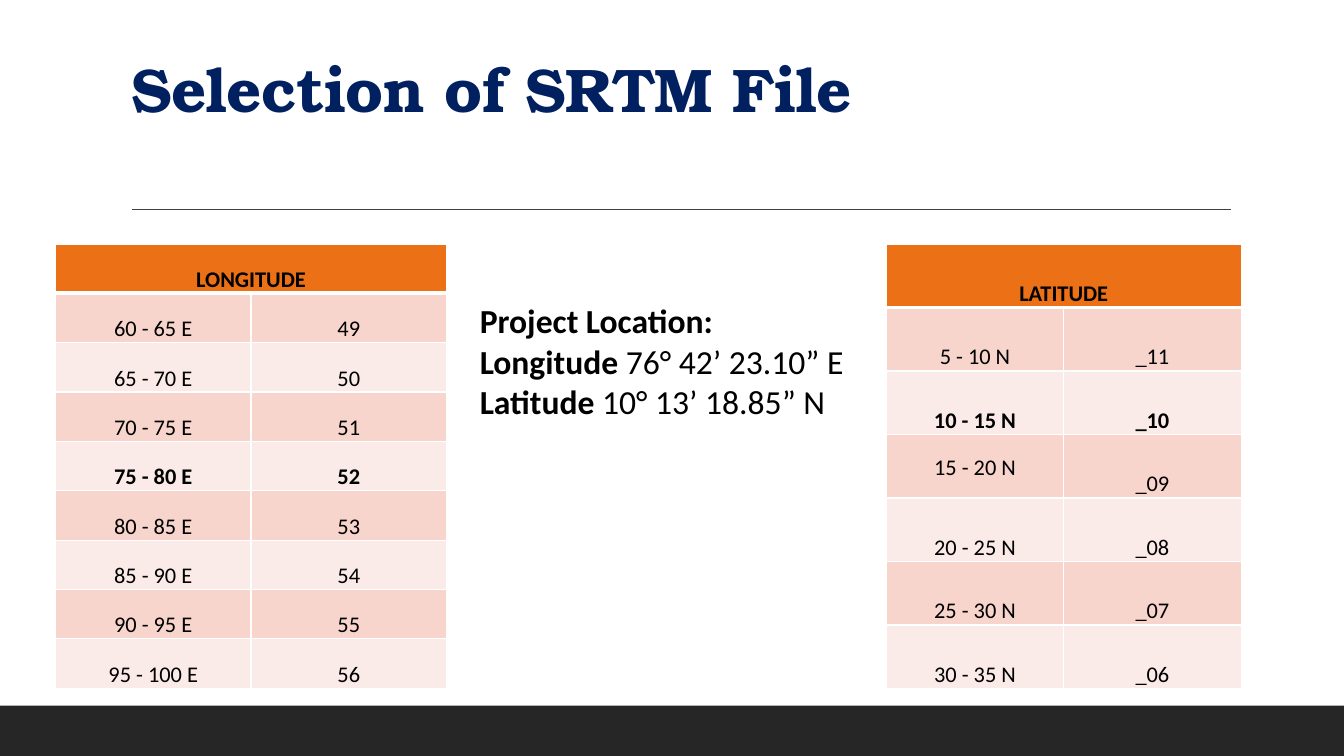
import pptx
import pptx.util
import pptx.dml.color
import pptx.enum.shapes
import pptx.enum.text
import pptx.oxml
import pptx.oxml.ns
import lxml.etree

Inches = pptx.util.Inches
Pt = pptx.util.Pt
RGBColor = pptx.dml.color.RGBColor
Anchor = pptx.enum.text.MSO_ANCHOR
qn = pptx.oxml.ns.qn

NAVY = RGBColor(0x00, 0x20, 0x60)
BLACK = RGBColor(0x00, 0x00, 0x00)
WHITE = RGBColor(0xFF, 0xFF, 0xFF)
CHARCOAL = RGBColor(0x26, 0x26, 0x26)
GRAY = RGBColor(0x40, 0x40, 0x40)
ORANGE = RGBColor(0xEC, 0x70, 0x16)
ROSE = RGBColor(0xF8, 0xD5, 0xCC)
PALE_ROSE = RGBColor(0xFB, 0xEB, 0xE8)


class SlideBuilder:
    title_font = "TeX Gyre Bonum"
    body_font = "Calibri"

    def __init__(self, slide):
        self.slide = slide

    def run(self, paragraph, text, size, bold=False, color=BLACK, font=body_font):
        run = paragraph.add_run()
        run.text = text
        run.font.name = font
        run.font.size = Pt(size)
        run.font.bold = bold
        run.font.color.rgb = color
        return run

    def title(self, text, left, top, width, height):
        title = self.slide.shapes.title
        title.left, title.top = Inches(left), Inches(top)
        title.width, title.height = Inches(width), Inches(height)
        frame = title.text_frame
        frame.word_wrap = True
        frame.auto_size = pptx.enum.text.MSO_AUTO_SIZE.NONE
        frame.vertical_anchor = Anchor.BOTTOM
        paragraph = frame.paragraphs[0]
        paragraph.alignment = pptx.enum.text.PP_ALIGN.LEFT
        paragraph.line_spacing = 0.9
        run = self.run(paragraph, text, 44, True, NAVY, self.title_font)
        run.font._element.set("spc", "-50")

    def bar(self, left, top, width, height, color):
        bar = self.slide.shapes.add_shape(
            pptx.enum.shapes.MSO_SHAPE.RECTANGLE,
            Inches(left), Inches(top), Inches(width), Inches(height))
        bar.shadow.inherit = False
        bar.fill.solid()
        bar.fill.fore_color.rgb = color
        bar.line.fill.background()

    def rule(self, left, right, y, color):
        rule = self.slide.shapes.add_connector(
            pptx.enum.shapes.MSO_CONNECTOR.STRAIGHT,
            Inches(left), Inches(y), Inches(right), Inches(y))
        rule.line.color.rgb = color
        rule.line.width = Pt(1)
        lxml.etree.SubElement(rule._element.spPr, qn("a:effectLst"))

    def text(self, left, top, width, height, lines):
        box = self.slide.shapes.add_textbox(
            Inches(left), Inches(top), Inches(width), Inches(height))
        frame = box.text_frame
        frame.word_wrap = True
        for index, line in enumerate(lines):
            paragraph = frame.add_paragraph() if index else frame.paragraphs[0]
            for words, bold in line:
                self.run(paragraph, words, 24, bold)

    def borders(self, cell, bottom):
        properties = cell._tc.get_or_add_tcPr()
        sides = (("lnL", 1), ("lnR", 1), ("lnT", 1), ("lnB", bottom))
        for index, (side, width) in enumerate(sides):
            properties.insert(index, pptx.oxml.parse_xml(
                f'<a:{side} {pptx.oxml.ns.nsdecls("a")} w="{Pt(width)}">'
                f'<a:solidFill><a:srgbClr val="{WHITE}"/></a:solidFill></a:{side}>'))

    def cell(self, cell, text, fill, bold, side_inset, top_inset, spacing,
             anchor=Anchor.BOTTOM, bottom_border=1):
        cell.fill.solid()
        cell.fill.fore_color.rgb = fill
        self.borders(cell, bottom_border)
        cell.margin_left = cell.margin_right = Inches(side_inset)
        cell.margin_top, cell.margin_bottom = Inches(top_inset), 0
        cell.vertical_anchor = anchor
        paragraph = cell.text_frame.paragraphs[0]
        paragraph.alignment = pptx.enum.text.PP_ALIGN.CENTER
        paragraph.line_spacing = spacing
        if text:
            self.run(paragraph, text, 16, bold)

    def range_table(self, heading, ranges, left, top, width, height, selected,
                    side_inset, top_inset, spacing, centered=None):
        count = len(ranges) + 1
        table = self.slide.shapes.add_table(
            count, 2, Inches(left), Inches(top), Inches(width), Inches(height)).table
        table.first_row = table.horz_banding = False
        for column in table.columns:
            column.width = Inches(width / 2)
        for row in table.rows:
            row.height = Inches(height / count)
        layout = (side_inset, top_inset, spacing)
        table.cell(0, 0).merge(table.cell(0, 1))
        for column, text in enumerate((heading, "")):
            self.cell(table.cell(0, column), text, ORANGE, True, *layout, bottom_border=3)
        for row, values in enumerate(ranges, 1):
            fill = ROSE if row % 2 else PALE_ROSE
            for column, text in enumerate(values):
                anchor = Anchor.MIDDLE if text == centered else Anchor.BOTTOM
                self.cell(table.cell(row, column), text, fill, values[0] == selected,
                          *layout, anchor=anchor)


def main():
    deck = pptx.Presentation()
    deck.slide_width, deck.slide_height = Inches(13.33), Inches(7.5)
    builder = SlideBuilder(deck.slides.add_slide(deck.slide_layouts[5]))

    builder.bar(0, 7, 13.33, 0.5, CHARCOAL)
    builder.rule(1.31, 12.21, 2.08, GRAY)
    builder.title("Selection of SRTM File", 1.2, 0.31, 11, 0.99)

    latitudes = [(f"{5 * i} - {5 * i + 5} N", f"_{12 - i:02d}") for i in range(1, 7)]
    longitudes = [(f"{5 * i} - {5 * i + 5} E", f"{37 + i}") for i in range(12, 20)]
    builder.range_table("LATITUDE", latitudes, 8.79, 2.42, 3.52, 4.41,
                        "10 - 15 N", 0.07, 0, 1.15, centered="15 - 20 N")
    builder.range_table("LONGITUDE", longitudes, 0.55, 2.42, 3.88, 4.41,
                        "75 - 80 E", 0.01, 0.01, 1.0)

    builder.text(4.66, 2.93, 3.88, 1.31, [
        [("Project Location:", True)],
        [("Longitude ", True), ("76° 42’ 23.10” E", False)],
        [("Latitude", True), (" 10° 13’ 18.85” N", False)],
    ])
    deck.save("out.pptx")


if __name__ == "__main__":
    main()
